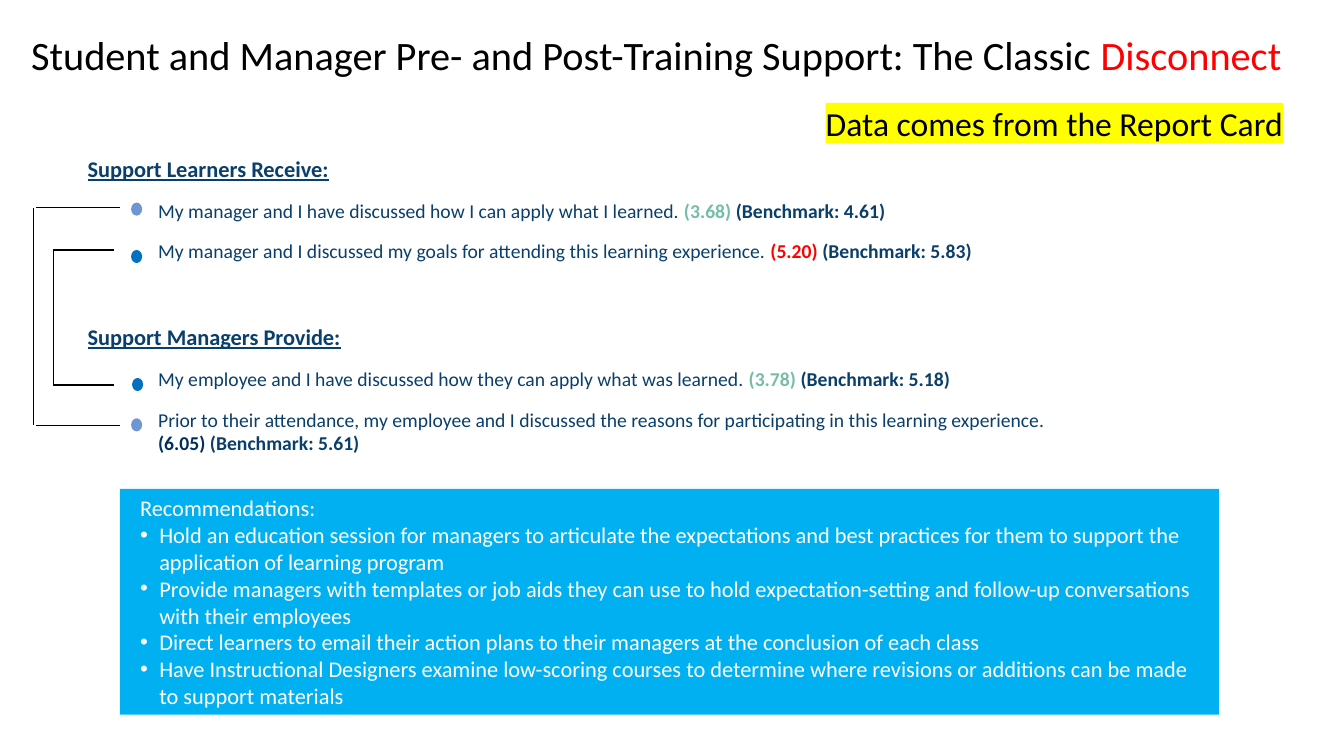
from lxml import etree
from pptx import Presentation
from pptx.dml.color import RGBColor
from pptx.enum.shapes import MSO_CONNECTOR, MSO_SHAPE
from pptx.enum.text import MSO_ANCHOR, PP_ALIGN
from pptx.oxml.ns import qn
from pptx.util import Inches, Pt

STRAIGHT = MSO_CONNECTOR.STRAIGHT
RECTANGLE, DOT = MSO_SHAPE.RECTANGLE, MSO_SHAPE.FLOWCHART_CONNECTOR
TOP, MIDDLE, LEFT = MSO_ANCHOR.TOP, MSO_ANCHOR.MIDDLE, PP_ALIGN.LEFT

BLACK = RGBColor(0x00, 0x00, 0x00)
WHITE = RGBColor(0xFF, 0xFF, 0xFF)
RED = RGBColor(0xFF, 0x00, 0x00)
YELLOW = RGBColor(0xFF, 0xFF, 0x00)
NAVY = RGBColor(0x0A, 0x3F, 0x6B)
DARK_NAVY = RGBColor(0x00, 0x2F, 0x5F)
GREEN = RGBColor(0x75, 0xBD, 0xA7)
PALE_BLUE = RGBColor(0x6E, 0x96, 0xD5)
BLUE = RGBColor(0x00, 0x70, 0xC0)
SKY = RGBColor(0x00, 0xB0, 0xF0)

# Content
TITLE = [("Student and Manager Pre- and Post-Training Support: The Classic ", BLACK),
         ("Disconnect", RED)]
DATA_NOTE = "Data comes from the Report Card"
# Heading, then statement, score, score colour, benchmark
SURVEY = [
    ("Support Learners Receive:", [
        ("My manager and I have discussed how I can apply what I learned. ",
         "(3.68) ", GREEN, "(Benchmark: 4.61)"),
        ("My manager and I discussed my goals for attending this learning experience. ",
         "(5.20) ", RED, "(Benchmark: 5.83)"),
    ]),
    ("Support Managers Provide:", [
        ("My employee and I have discussed how they can apply what was learned. ",
         "(3.78) ", GREEN, "(Benchmark: 5.18)"),
        ("Prior to their attendance, my employee and I discussed the reasons for "
         "participating in this learning experience. ",
         "(6.05) ", DARK_NAVY, "(Benchmark: 5.61)"),
    ]),
]
RECOMMENDATIONS_HEADING = "Recommendations:"
RECOMMENDATIONS = [
    "Hold an education session for managers to articulate the expectations and best "
    "practices for them to support the application of learning program",
    "Provide managers with templates or job aids they can use to hold "
    "expectation-setting and follow-up conversations with their employees",
    "Direct learners to email their action plans to their managers at the conclusion "
    "of each class",
    "Have Instructional Designers examine low-scoring courses to determine where "
    "revisions or additions can be made to support materials",
]
# Brackets pairing statements: spine x, arm start x, arm end x, top y, bottom y
BRACKETS = [(0.33, 0.36, 1.19, 2.06, 4.22), (0.53, 0.53, 1.13, 2.48, 3.82)]
# Dots: left, top, colour
DOTS = [(1.3, 2.01, PALE_BLUE), (1.3, 4.15, PALE_BLUE),
        (1.3, 2.48, BLUE), (1.31, 3.75, BLUE)]
DOT_WIDTH, DOT_HEIGHT = 0.11, 0.13

presentation = Presentation()
presentation.slide_width, presentation.slide_height = Inches(13.33), Inches(7.5)
slide = presentation.slides.add_slide(presentation.slide_layouts[6])


def add_run(paragraph, text, size, color, bold=False, underline=False):
    run = paragraph.add_run()
    run.text = text
    font = run.font
    font.name, font.size, font.bold, font.underline = "Calibri", Pt(size), bold, underline
    font.color.rgb = color


def set_indent(paragraph, left, first=0.0, bullet=None):
    properties = paragraph._p.get_or_add_pPr()
    properties.set("marL", str(Inches(left)))
    properties.set("indent", str(Inches(first)))
    if bullet:
        etree.SubElement(properties, qn("a:buFont")).set("typeface", "Arial")
        etree.SubElement(properties, qn("a:buChar")).set("char", bullet)


def set_frame(shape, anchor, insets=(0.1, 0.05, 0.1, 0.05)):
    frame = shape.text_frame
    frame.word_wrap = True
    frame.vertical_anchor = anchor
    (frame.margin_left, frame.margin_top,
     frame.margin_right, frame.margin_bottom) = map(Inches, insets)
    return frame


def add_textbox(left, top, width, height, anchor):
    box = slide.shapes.add_textbox(*map(Inches, (left, top, width, height)))
    return set_frame(box, anchor)


def add_filled(kind, left, top, width, height, color):
    shape = slide.shapes.add_shape(kind, *map(Inches, (left, top, width, height)))
    shape.shadow.inherit = False
    shape.fill.solid()
    shape.fill.fore_color.rgb = color
    shape.line.fill.background()
    return shape


def add_line(x1, y1, x2, y2, width):
    line = slide.shapes.add_connector(STRAIGHT, *map(Inches, (x1, y1, x2, y2)))
    line.line.color.rgb = BLACK
    line.line.width = Pt(width)
    etree.SubElement(line._element.spPr, qn("a:effectLst"))


# Title
title = add_textbox(0.21, 0.09, 13.12, 0.95, MIDDLE).paragraphs[0]
title.line_spacing = 0.9
for text, color in TITLE:
    add_run(title, text, 28.8, color)

# Survey statements with scores
survey = add_textbox(0.77, 1.49, 9.99, 3.99, TOP)
for number, (heading, statements) in enumerate(SURVEY):
    paragraph = survey.add_paragraph() if number else survey.paragraphs[0]
    paragraph.space_before = Pt(31.5 * number)
    paragraph.space_after = Pt(12)
    add_run(paragraph, heading, 16, NAVY, bold=True, underline=True)
    for statement, score, score_color, benchmark in statements:
        paragraph = survey.add_paragraph()
        paragraph.space_after = Pt(12)
        set_indent(paragraph, 0.7)
        add_run(paragraph, statement, 14, NAVY)
        add_run(paragraph, score, 14, score_color, bold=True)
        add_run(paragraph, benchmark, 14, NAVY, bold=True)

# Brackets and dots
for spine, arm_start, arm_end, top, bottom in BRACKETS:
    add_line(spine, top, spine, bottom, 0.5)
    for y in (bottom, top):
        add_line(arm_start, y, arm_end, y, 1)
for left, top, color in DOTS:
    add_filled(DOT, left, top, DOT_WIDTH, DOT_HEIGHT, color)

# Recommendations panel
panel = add_filled(RECTANGLE, 1.19, 4.85, 10.9, 2.24, SKY)
advice = set_frame(panel, MIDDLE, (0.2, 0.05, 0.1, 0.05))
advice.paragraphs[0].alignment = LEFT
add_run(advice.paragraphs[0], RECOMMENDATIONS_HEADING, 16, WHITE)
for recommendation in RECOMMENDATIONS:
    paragraph = advice.add_paragraph()
    paragraph.alignment = LEFT
    set_indent(paragraph, 0.19, -0.19, "•")
    add_run(paragraph, recommendation, 16, WHITE)

# Data source note
note = set_frame(add_filled(RECTANGLE, 8.19, 1.02, 4.54, 0.4, YELLOW), TOP, (0, 0, 0, 0))
note.word_wrap = False
note.paragraphs[0].alignment = LEFT
add_run(note.paragraphs[0], DATA_NOTE, 24, BLACK)

presentation.save("out.pptx")
